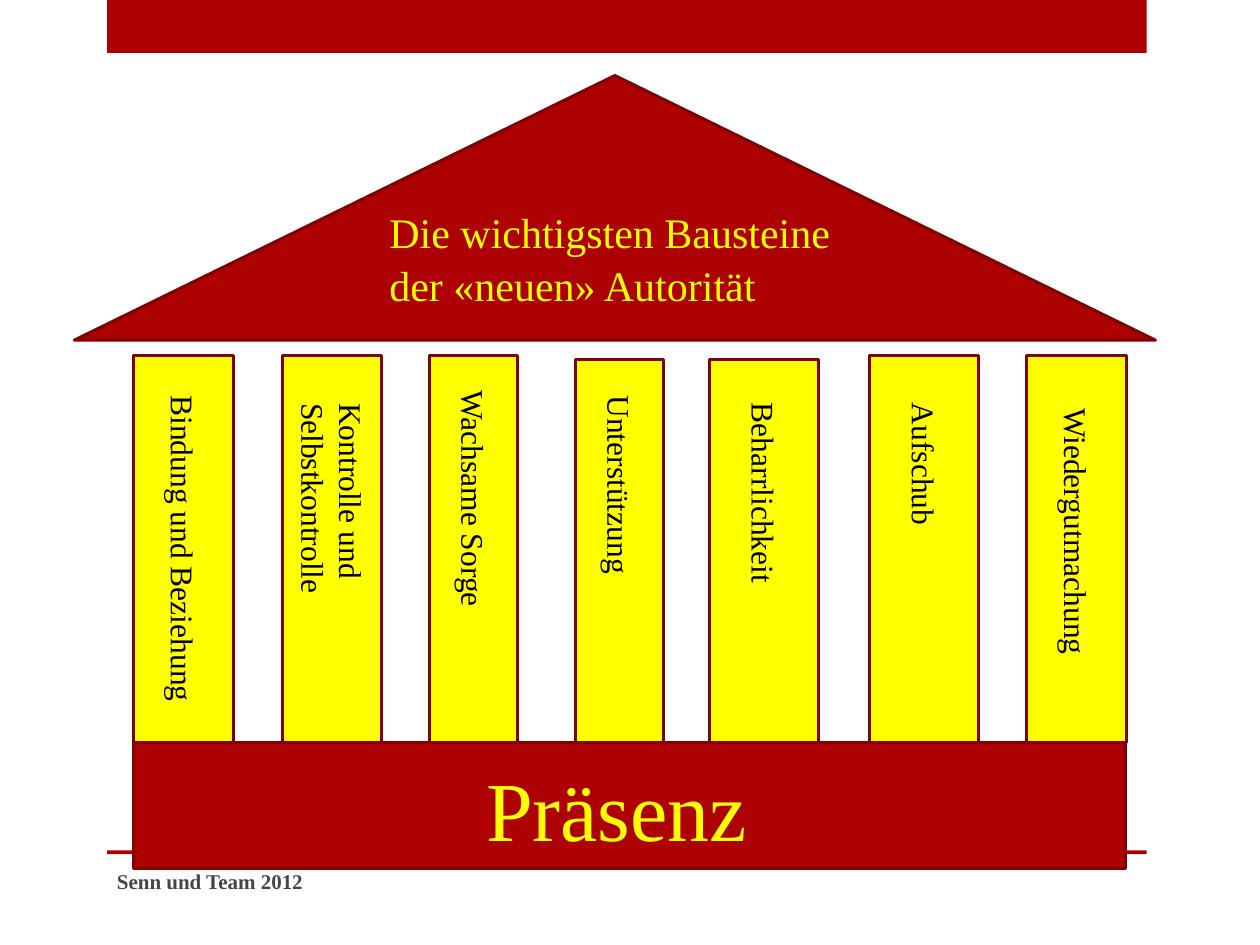
import pptx
from pptx.dml.color import RGBColor
from pptx.enum.shapes import MSO_SHAPE
from pptx.enum.text import MSO_ANCHOR, MSO_AUTO_SIZE, PP_ALIGN
from pptx.util import Inches, Pt

RED, DARK_RED, YELLOW = "AD0101", "800101", "FFFF00"
BLACK, GREY = "000000", "454545"
FONT = "Times New Roman"

TITLE = "Die wichtigsten Bausteine der «neuen» Autorität"
FOUNDATION = "Präsenz"
FOOTER = "Senn und Team 2012"

# label, column left, column width, column top, label start, label length, label depth
PILLARS = [
    ("Bindung und Beziehung", 1.06, 0.79, 2.82, 3.04, 2.92, 0.4),
    ("Kontrolle und Selbstkontrolle", 2.24, 0.79, 2.82, 3.1, 3.12, 0.71),
    ("Wachsame Sorge", 3.41, 0.7, 2.82, 3.0, 3.31, 0.4),
    ("Unterstützung", 4.57, 0.7, 2.85, 3.04, 3.59, 0.4),
    ("Beharrlichkeit", 5.63, 0.87, 2.85, 3.1, 3.36, 0.4),
    ("Aufschub", 6.9, 0.87, 2.82, 3.1, 2.76, 0.4),
    ("Wiedergutmachung", 8.15, 0.79, 2.82, 3.14, 3.15, 0.4),
]
BASE_TOP = 5.89


def color(hex_value):
    return RGBColor.from_string(hex_value)


def add_block(slide, box, fill, outline=None, preset=MSO_SHAPE.RECTANGLE):
    block = slide.shapes.add_shape(preset, *map(Inches, box))
    block.shadow.inherit = False
    block.fill.solid()
    block.fill.fore_color.rgb = color(fill)
    if outline:
        block.line.color.rgb = color(outline)
        block.line.width = Pt(1.75)
    else:
        block.line.fill.background()


def write(shape, text, size, hex_value, anchor=MSO_ANCHOR.TOP, bold=False):
    frame = shape.text_frame
    frame.word_wrap = True
    frame.auto_size = MSO_AUTO_SIZE.NONE
    frame.vertical_anchor = anchor
    paragraph = frame.paragraphs[0]
    paragraph.text = text
    paragraph.alignment = PP_ALIGN.LEFT
    paragraph.font.name = FONT
    paragraph.font.size = Pt(size)
    paragraph.font.bold = bold
    paragraph.font.color.rgb = color(hex_value)
    return paragraph


def add_label(slide, box, *style, **options):
    label = slide.shapes.add_textbox(*map(Inches, box))
    write(label, *style, **options)
    return label


def main():
    deck = pptx.Presentation()
    deck.slide_width, deck.slide_height = Inches(10), Inches(7.5)
    slide = deck.slides.add_slide(deck.slide_layouts[5])

    add_block(slide, (0.85, 0, 8.25, 0.42), RED)
    add_block(slide, (0.85, 6.75, 8.25, 0.03), RED)
    add_block(slide, (0.59, 0.6, 8.58, 2.1), RED, DARK_RED, MSO_SHAPE.ISOSCELES_TRIANGLE)

    title = slide.shapes.title
    title.left, title.top, title.width, title.height = map(Inches, (2.99, 2.18, 4.1, 0.33))
    heading = write(title, TITLE, 24, YELLOW, anchor=MSO_ANCHOR.BOTTOM)
    heading.line_spacing = 1.06
    # Bring the title in front of the roof
    slide.shapes._spTree.append(title._element)

    for text, left, width, top, start, length, depth in PILLARS:
        add_block(slide, (left, top, width, BASE_TOP - top), YELLOW, DARK_RED)
        # Rotation turns about the centre, so place the unrotated box around it
        center_x, center_y = left + width / 2, start + length / 2
        box = (center_x - length / 2, center_y - depth / 2, length, depth)
        add_label(slide, box, text, 18, BLACK).rotation = 90

    add_block(slide, (1.06, BASE_TOP, 7.87, 1), RED, DARK_RED)
    add_label(slide, (3.76, 5.96, 2.5, 0.91), FOUNDATION, 48, YELLOW)
    add_label(slide, (0.83, 6.79, 5.33, 0.4), FOOTER, 12, GREY,
              anchor=MSO_ANCHOR.MIDDLE, bold=True)
    deck.save("out.pptx")


if __name__ == "__main__":
    main()
